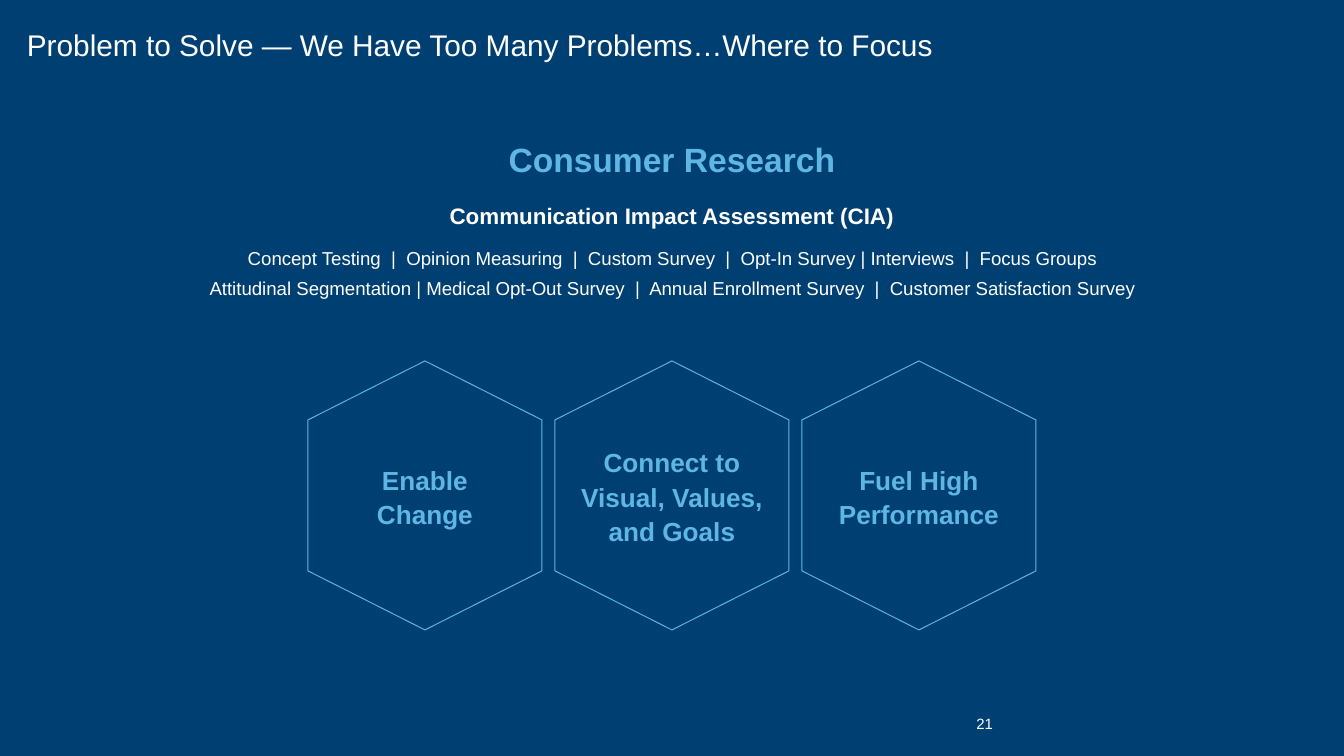
from pptx import Presentation
from pptx.dml.color import RGBColor
from pptx.enum.text import MSO_ANCHOR, PP_ALIGN
from pptx.util import Pt

SCALE = 914400 / 134.4  # EMU per px
PAGE_W, PAGE_H = 1344, 756
FONT = "Arial"
COLORS = {"navy": "003F72", "white": "FFFFFF", "sky": "5EB6E4"}
LEFT, CENTER, RIGHT = PP_ALIGN.LEFT, PP_ALIGN.CENTER, PP_ALIGN.RIGHT
TOP, MIDDLE, BOTTOM = MSO_ANCHOR.TOP, MSO_ANCHOR.MIDDLE, MSO_ANCHOR.BOTTOM

HEX_LEFT, HEX_TOP, HEX_W, HEX_H = 308, 361, 234, 269
HEX_PITCH, HEX_SHOULDER = 247, 59
GOALS = ["Enable\nChange", "Connect to Visual, Values, and Goals", "Fuel High Performance"]
SURVEYS = [
    "Concept Testing  |  Opinion Measuring  |  Custom Survey  |  Opt-In Survey | Interviews  |  Focus Groups",
    "Attitudinal Segmentation | Medical Opt-Out Survey  |  Annual Enrollment Survey  |  Customer Satisfaction Survey",
]


def emu(px):
    return round(px * SCALE)


def rgb(name):
    return RGBColor.from_string(COLORS[name])


class SlideBuilder:
    def __init__(self, deck):
        self.page = deck.slides.add_slide(deck.slide_layouts[6])
        fill = self.page.background.fill
        fill.solid()
        fill.fore_color.rgb = rgb("navy")

    def frame(self, shape, insets, anchor):
        """Set up the text frame; insets run left, top, right, bottom."""
        frame = shape.text_frame
        frame.word_wrap = True
        frame.vertical_anchor = anchor
        (frame.margin_left, frame.margin_top,
         frame.margin_right, frame.margin_bottom) = map(emu, insets)
        return frame

    def text_box(self, left, top, width, height, insets=(0, 0, 0, 0), anchor=TOP):
        box = self.page.shapes.add_textbox(*map(emu, (left, top, width, height)))
        return self.frame(box, insets, anchor)

    def paragraph(self, frame, text, size, color, bold=False, align=CENTER,
                  spacing=1.0, before=0, after=0):
        first = frame.paragraphs[0]
        para = frame.add_paragraph() if first.runs else first
        para.alignment = align
        para.line_spacing = spacing
        para.space_before, para.space_after = Pt(before), Pt(after)
        for index, line in enumerate(text.split("\n")):
            if index:
                para.add_line_break()
            span = para.add_run()
            span.text = line
            span.font.name = FONT
            span.font.size = Pt(size)
            span.font.bold = bold
            span.font.color.rgb = rgb(color)

    def hexagon(self, left, top, text):
        right, middle, bottom = left + HEX_W, left + HEX_W // 2, top + HEX_H
        upper, lower = top + HEX_SHOULDER, bottom - HEX_SHOULDER
        outline = self.page.shapes.build_freeform(middle, top, SCALE)
        outline.add_line_segments(
            [(right, upper), (right, lower), (middle, bottom), (left, lower), (left, upper)],
            close=True)
        shape = outline.convert_to_shape()
        shape.shadow.inherit = False
        shape.fill.background()
        shape.line.color.rgb = rgb("sky")
        shape.line.width = Pt(0.5)
        frame = self.frame(shape, (13, 13, 13, 13), MIDDLE)
        self.paragraph(frame, text, 14, "sky", bold=True, spacing=1.1)


def main():
    deck = Presentation()
    deck.slide_width, deck.slide_height = emu(PAGE_W), emu(PAGE_H)
    slide = SlideBuilder(deck)

    number = slide.text_box(941, 715, 52, 18, anchor=BOTTOM)
    slide.paragraph(number, "21", 8, "white", align=RIGHT)

    title = slide.text_box(0, 24, PAGE_W, 58, insets=(27, 7, 13, 7))
    slide.paragraph(title, "Problem to Solve ― We Have Too Many Problems…Where to Focus",
                    16, "white", align=LEFT, spacing=0.9)

    for index, goal in enumerate(GOALS):
        slide.hexagon(HEX_LEFT + index * HEX_PITCH, HEX_TOP, goal)

    research = slide.text_box(0, 139, PAGE_W, 77)
    slide.paragraph(research, "Consumer Research", 18, "sky", bold=True, after=12)
    slide.paragraph(research, "Communication Impact Assessment (CIA)", 12, "white",
                    bold=True, after=6)
    for surveys in SURVEYS:
        slide.paragraph(research, surveys, 10, "white", before=4)

    deck.save("out.pptx")


if __name__ == "__main__":
    main()
